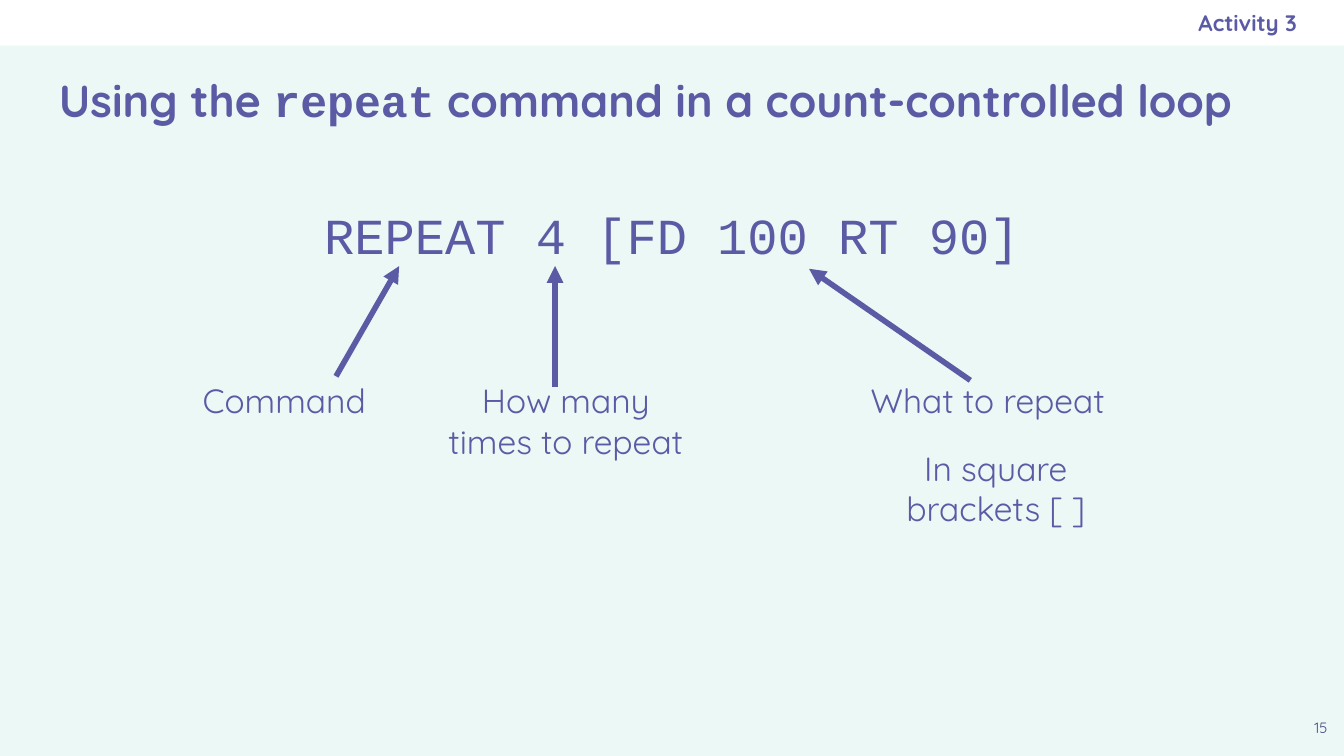
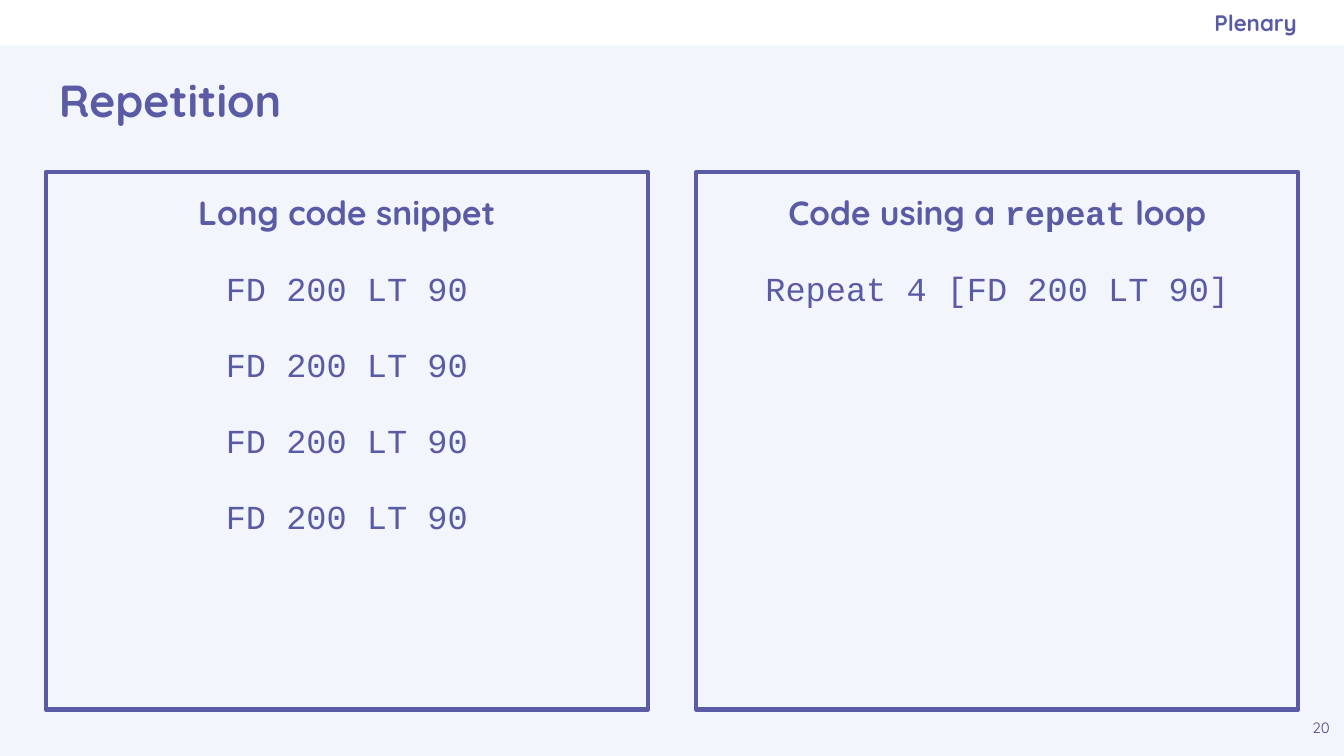
import dataclasses
import typing

import lxml.etree
import pptx
import pptx.dml.color
import pptx.enum.shapes
import pptx.enum.text
import pptx.oxml.ns
import pptx.util

COLS, ROWS = 100, 56.25
CELL = 0.1
EDGE, GAP, BAND = 3.4, 3.6, 3.4
WIDE = COLS - 2 * EDGE
PANE = (WIDE - GAP) / 2
INK, NOTE, WHITE = "5B5BA5", "494985", "FFFFFF"
SANS, MONO = "Quicksand", "Courier New"
LEFT = pptx.enum.text.PP_ALIGN.LEFT
MID = pptx.enum.text.PP_ALIGN.CENTER
RIGHT = pptx.enum.text.PP_ALIGN.RIGHT


@dataclasses.dataclass(frozen=True)
class Run:
    text: str
    font: str = SANS
    size: float = 18
    bold: bool = False
    color: str = INK


@dataclasses.dataclass(frozen=True)
class Para:
    runs: tuple[Run, ...]
    align: typing.Any = MID
    lead: float = 1
    above: float = 0


class Box(typing.NamedTuple):
    col: float
    row: float
    wide: float
    high: float


class Label(typing.NamedTuple):
    text: str
    box: Box
    align: typing.Any = MID


class Arrow(typing.NamedTuple):
    start: tuple[float, float]
    end: tuple[float, float]


class Page(typing.NamedTuple):
    fill: str
    tag: str
    title: tuple[Run, ...]
    number: int


def grid(*cells: float) -> list[pptx.util.Emu]:
    return [pptx.util.Inches(cell * CELL) for cell in cells]


def paint(target: typing.Any, color: str) -> None:
    target.solid()
    target.fore_color.rgb = pptx.dml.color.RGBColor.from_string(color)


def add_tag(host: typing.Any, name: str, **attrs: str) -> None:
    lxml.etree.SubElement(host, pptx.oxml.ns.qn(name), **attrs)


def stroke(shape: typing.Any, width: float) -> typing.Any:
    paint(shape.line.fill, INK)
    shape.line.width = pptx.util.Pt(width)
    return shape.element.spPr.find(pptx.oxml.ns.qn("a:ln"))


def write(shape: typing.Any, paras: typing.Sequence[Para], middle: bool = False,
          top: float = 1, right: float = 1) -> None:
    frame = shape.text_frame
    frame.word_wrap = True
    anchor = pptx.enum.text.MSO_ANCHOR
    frame.vertical_anchor = anchor.MIDDLE if middle else anchor.TOP
    (frame.margin_left, frame.margin_top,
     frame.margin_right, frame.margin_bottom) = grid(1, top, right, 1)
    for index, para in enumerate(paras):
        line = frame.add_paragraph() if index else frame.paragraphs[0]
        line.alignment = para.align
        line.line_spacing = para.lead
        line.space_before = pptx.util.Pt(para.above)
        for run in para.runs:
            piece = line.add_run()
            piece.text = run.text
            piece.font.name = run.font
            piece.font.size = pptx.util.Pt(run.size)
            piece.font.bold = run.bold
            paint(piece.font.fill, run.color)


def add_text(slide: typing.Any, box: Box, para: Para, **style: typing.Any) -> None:
    write(slide.shapes.add_textbox(*grid(*box)), [para], **style)


def add_rect(slide: typing.Any, box: Box) -> typing.Any:
    kind = pptx.enum.shapes.MSO_SHAPE.RECTANGLE
    shape = slide.shapes.add_shape(kind, *grid(*box))
    shape.shadow.inherit = False
    return shape


def add_arrow(slide: typing.Any, arrow: Arrow) -> None:
    kind = pptx.enum.shapes.MSO_CONNECTOR.STRAIGHT
    line = slide.shapes.add_connector(kind, *grid(*arrow.start, *arrow.end))
    add_tag(stroke(line, 3), "a:tailEnd", type="triangle")
    add_tag(line.element.spPr, "a:effectLst")


def add_pane(slide: typing.Any, index: int, head: tuple[Run, ...],
             code: typing.Sequence[str]) -> None:
    box = Box(EDGE + index * (PANE + GAP), 12.8, PANE, 40)
    shape = add_rect(slide, box)
    shape.fill.background()
    add_tag(stroke(shape, 2.25), "a:round")
    lines = [Para((Run(text, MONO),), lead=1.15, above=16) for text in code]
    write(shape, [Para(head, lead=1.15), *lines])


def add_page(deck: typing.Any, page: Page) -> typing.Any:
    slide = deck.slides.add_slide(deck.slide_layouts[6])
    paint(slide.background.fill, page.fill)
    band = add_rect(slide, Box(0, 0, COLS, BAND))
    paint(band.fill, WHITE)
    band.line.fill.background()
    add_text(slide, Box(EDGE, 3.5, WIDE, 7.8), Para(page.title, LEFT), middle=True)
    number = Run(str(page.number), size=8, color=NOTE)
    add_text(slide, Box(COLS - EDGE, 52.8, EDGE, EDGE), Para((number,)))
    tag = Run(page.tag, size=12, bold=True)
    add_text(slide, Box(57.5, 0, 39, BAND), Para((tag,), RIGHT),
             middle=True, right=0)
    return slide


def add_syntax(deck: typing.Any) -> None:
    title = (
        Run("Using the ", size=24, bold=True),
        Run("repeat", MONO, 24, True),
        Run(" command in a count-controlled loop", size=24, bold=True),
    )
    slide = add_page(deck, Page("ECF8F5", "Activity 3", title, 15))
    code = Run("REPEAT 4 [FD 100 RT 90]", MONO, 27)
    add_text(slide, Box(EDGE, 11.1, WIDE, 13.2), Para((code,)), top=4.7)
    labels = (
        Label("Command", Box(14.1, 27.3, 15.2, 5), LEFT),
        Label("How many times to repeat", Box(32.1, 27.3, 20, 8.1)),
        Label("What to repeat", Box(63.5, 27.3, 20, 5.6)),
        Label("In square brackets [ ]", Box(64.1, 32.3, 20, 8.7)),
    )
    for label in labels:
        add_text(slide, label.box, Para((Run(label.text),), label.align))
    arrows = (
        Arrow((25, 28), (29.7, 19.8)),
        Arrow((41.3, 28.8), (41.3, 19.8)),
        Arrow((72.2, 28.3), (60.2, 20)),
    )
    for arrow in arrows:
        add_arrow(slide, arrow)


def add_review(deck: typing.Any) -> None:
    title = (Run("Repetition", size=24, bold=True),)
    slide = add_page(deck, Page("F2F6FC", "Plenary", title, 20))
    step = "FD 200 LT 90"
    add_pane(slide, 0, (Run("Long code snippet", bold=True),), [step] * 4)
    head = (
        Run("Code using a ", bold=True),
        Run("repeat", MONO, bold=True),
        Run(" loop", bold=True),
    )
    add_pane(slide, 1, head, [f"Repeat 4 [{step}]"])


def main() -> None:
    deck = pptx.Presentation()
    deck.slide_width, deck.slide_height = grid(COLS, ROWS)
    add_syntax(deck)
    add_review(deck)
    deck.save("out.pptx")


if __name__ == "__main__":
    main()
